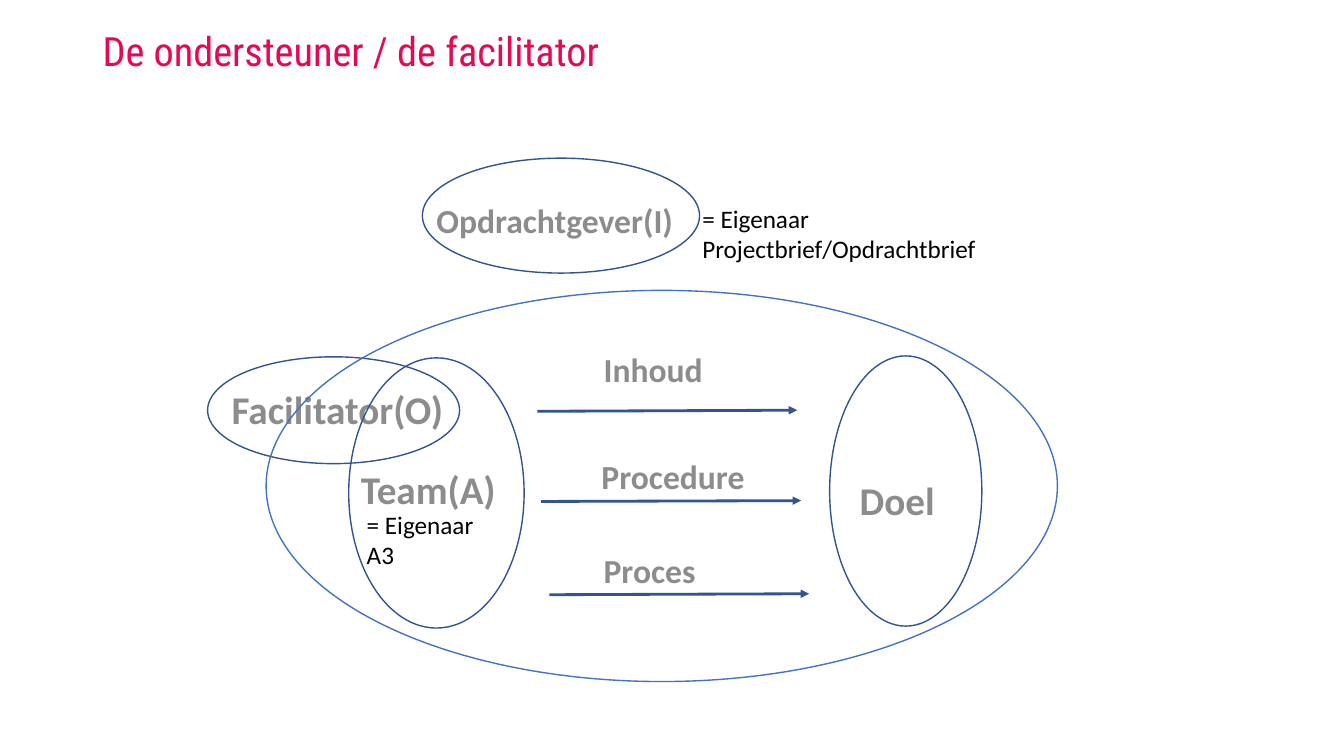
import pptx
import pptx.dml.color
import pptx.enum.shapes
import pptx.enum.text
import pptx.oxml.ns
import pptx.util
from lxml import etree

Pt = pptx.util.Pt
Anchor = pptx.enum.text.MSO_ANCHOR
PINK = pptx.dml.color.RGBColor(0xE5, 0x08, 0x56)
GREY = pptx.dml.color.RGBColor(0x8C, 0x8C, 0x8C)
BLACK = pptx.dml.color.RGBColor(0, 0, 0)
NAVY = pptx.dml.color.RGBColor(0x32, 0x54, 0x91)
BLUE = pptx.dml.color.RGBColor(0x44, 0x72, 0xC4)

deck = pptx.Presentation()
deck.slide_width, deck.slide_height = Pt(960), Pt(540)
page = deck.slides.add_slide(deck.slide_layouts[6])


def add_text(text, left, top, width, height, size, color, font="Calibri",
             bold=False, anchor=Anchor.TOP, spacing=1.0):
    box = page.shapes.add_textbox(Pt(left), Pt(top), Pt(width), Pt(height))
    frame = box.text_frame
    frame.word_wrap = True
    frame.vertical_anchor = anchor
    para = frame.paragraphs[0]
    para.line_spacing = spacing
    span = para.add_run()
    span.text = text
    span.font.name = font
    span.font.size = Pt(size)
    span.font.bold = bold
    span.font.color.rgb = color
    return box


def add_ellipse(left, top, width, height, color=NAVY):
    ellipse = page.shapes.add_shape(pptx.enum.shapes.MSO_SHAPE.OVAL,
                                    Pt(left), Pt(top), Pt(width), Pt(height))
    ellipse.shadow.inherit = False
    ellipse.fill.background()
    ellipse.line.color.rgb = color
    ellipse.line.width = Pt(1)


title = add_text("De ondersteuner / de facilitator", 66.2, 28.8, 828, 59, 28.8, PINK,
                 font="Roboto Condensed", anchor=Anchor.BOTTOM, spacing=0.9)
# The title stands high in its box
title.text_frame.margin_top = 0
title.text_frame.margin_bottom = Pt(37.4)

add_ellipse(592.6, 254.2, 108.7, 193)  # Doel

labels = [
    ("Opdrachtgever(I)", 304.6, 120.2, 198, 54.7, 24),
    ("Facilitator(O)", 158.4, 259.2, 199.4, 53.3, 28),
    ("Team(A)", 250.6, 316.1, 130.3, 53.3, 28),
    ("Proces", 424.1, 371.5, 108.7, 53.3, 24),
    ("Procedure", 422.6, 304.6, 134.6, 53.3, 24),
    ("Inhoud", 424.1, 228.2, 118.1, 53.3, 24),
    ("Doel", 607, 324, 87.8, 53.3, 28),
]
for text, left, top, width, height, size in labels:
    add_text(text, left, top, width, height, size, GREY,
             bold=True, anchor=Anchor.BOTTOM, spacing=1.1)

add_ellipse(249.1, 255.6, 125.3, 193)  # Team
add_ellipse(148.3, 254.9, 180, 76.3)  # Facilitator
add_ellipse(301.7, 113, 198, 82.1)  # Opdrachtgever

for left, start_y, end_y in [(383.8, 293.8, 293), (386.6, 358.2, 357.6), (392.4, 424.8, 424.1)]:
    arrow = page.shapes.add_connector(pptx.enum.shapes.MSO_CONNECTOR.STRAIGHT,
                                      Pt(left), Pt(start_y), Pt(left + 185.6), Pt(end_y))
    arrow.line.color.rgb = NAVY
    arrow.line.width = Pt(2)
    etree.SubElement(arrow.line._get_or_add_ln(), pptx.oxml.ns.qn("a:tailEnd"), type="triangle")
    etree.SubElement(arrow._element.spPr, pptx.oxml.ns.qn("a:effectLst"))

add_ellipse(190.1, 207.4, 565.2, 279.4, BLUE)  # Project

add_text("= Eigenaar Projectbrief/Opdrachtbrief", 494.6, 141.8, 237.6, 51.1, 18, BLACK)
add_text("= Eigenaar A3", 254.9, 360, 112.3, 51.1, 18, BLACK)

deck.save("out.pptx")
